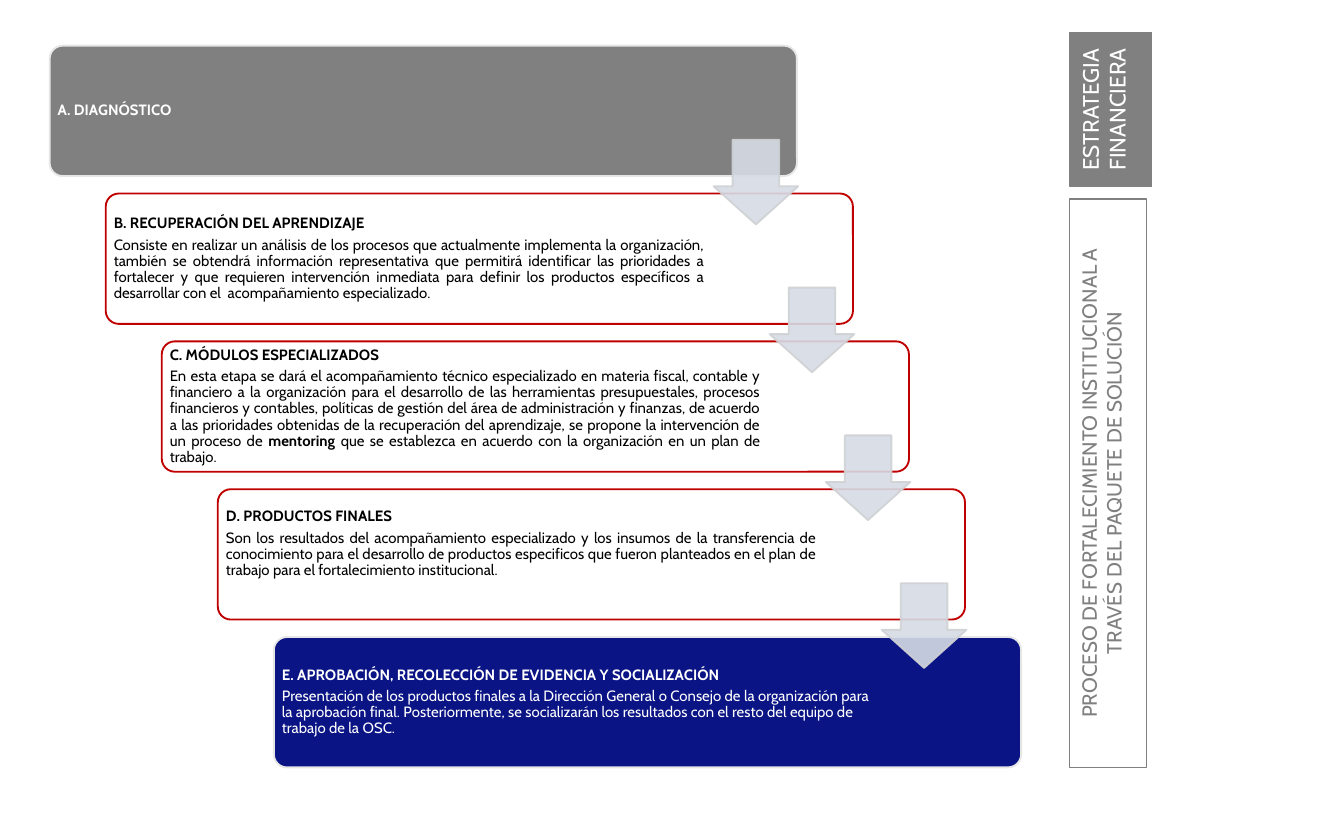
"""Builds the five-step institutional strengthening slide."""
from lxml.etree import SubElement
from pptx import Presentation
from pptx.dml.color import RGBColor
from pptx.enum.shapes import MSO_SHAPE
from pptx.enum.text import MSO_ANCHOR, PP_ALIGN
from pptx.oxml.ns import qn
from pptx.util import Inches, Pt

COLORS = {
    "white": "FFFFFF", "black": "000000", "gray": "808080", "pale": "E7E6E6",
    "red": "C00000", "navy": "0A1485", "arrow": "D6DCE5", "arrow_edge": "CFD1D4",
}
COLUMNS, ROWS = 100, 62.5
STEP_LEFT, STEP_TOP, STEP_RIGHT, STEP_DOWN = 3.7, 3.4, 4.17, 11
LEFT, JUSTIFY = PP_ALIGN.LEFT, PP_ALIGN.JUSTIFY

STEPS = [
    ("A. DIAGNÓSTICO", [], LEFT, "gray", "pale", "white", 0.03),
    ("B. RECUPERACIÓN DEL APRENDIZAJE", [
        ("Consiste en realizar un análisis de los procesos que actualmente implementa la "
         "organización, también se obtendrá información representativa que permitirá "
         "identificar las prioridades a fortalecer y que requieren intervención inmediata "
         "para definir los productos específicos a desarrollar con el  acompañamiento "
         "especializado.", False),
    ], JUSTIFY, "white", "red", "black", 0.03),
    ("C. MÓDULOS ESPECIALIZADOS", [
        ("En esta etapa se dará el acompañamiento técnico especializado en materia fiscal, "
         "contable y financiero a la organización para el desarrollo de las herramientas "
         "presupuestales, procesos financieros y contables, políticas de gestión del área "
         "de administración y finanzas, de acuerdo a las prioridades obtenidas de la "
         "recuperación del aprendizaje, se propone la intervención de un proceso de ", False),
        ("mentoring ", True),
        ("que se establezca en acuerdo con la organización en un plan de trabajo.", False),
    ], JUSTIFY, "white", "red", "black", 0.03),
    ("D. PRODUCTOS FINALES", [
        ("Son los resultados del acompañamiento especializado y los insumos de la "
         "transferencia de conocimiento para el desarrollo de productos especificos que "
         "fueron planteados en el plan de trabajo para el fortalecimiento institucional.",
         False),
    ], JUSTIFY, "white", "red", "black", 0.19),
    ("E. APROBACIÓN, RECOLECCIÓN DE EVIDENCIA Y SOCIALIZACIÓN", [
        ("Presentación de los productos finales a la Dirección General o Consejo de la "
         "organización para la aprobación final. Posteriormente, se socializarán los "
         "resultados con el resto del equipo de trabajo de la OSC.", False),
    ], LEFT, "navy", "pale", "white", 0.03),
]


def rgb(name):
    """Return the named color."""
    return RGBColor.from_string(COLORS[name])


def write(para, text, size=8, color="black", bold=False):
    """Add a formatted span of text to a paragraph."""
    span = para.add_run()
    span.text = text
    font = span.font
    font.name, font.size, font.bold = "Cabin", Pt(size), bold
    font.color.rgb = rgb(color)


class Slide:
    """Holds the grid and style of the current slide."""

    def __init__(self, deck):
        """Start a blank page."""
        self.column = deck.slide_width / COLUMNS
        self.row = deck.slide_height / ROWS
        self.page = deck.slides.add_slide(deck.slide_layouts[6])

    def place(self, left, top, width, height):
        """Turn grid columns and rows into slide lengths."""
        return (round(left * self.column), round(top * self.row),
                round(width * self.column), round(height * self.row))

    def shape(self, kind, area, fill, line, weight=1, adjust=(), alpha=None):
        """Add a preset shape with its fill and outline."""
        box = self.page.shapes.add_shape(kind, *self.place(*area))
        box.shadow.inherit = False
        for index, value in enumerate(adjust):
            box.adjustments[index] = value
        if fill:
            box.fill.solid()
            box.fill.fore_color.rgb = rgb(fill)
        else:
            box.fill.background()
        box.line.color.rgb = rgb(line)
        box.line.width = Pt(weight)
        if alpha:
            for color in box._element.spPr.iter(qn("a:srgbClr")):
                SubElement(color, qn("a:alpha"), val=str(alpha * 1000))
        return box

    def step_text(self, area, heading, spans, align, color, bottom):
        """Add a bold heading and its explanation."""
        frame = self.page.shapes.add_textbox(*self.place(*area)).text_frame
        frame.word_wrap = True
        frame.vertical_anchor = MSO_ANCHOR.MIDDLE
        frame.margin_left = frame.margin_top = frame.margin_right = Inches(0.03)
        frame.margin_bottom = Inches(bottom)
        write(frame.paragraphs[0], heading, color=color, bold=True)
        if spans:
            para = frame.add_paragraph()
            para.alignment = align
            for text, bold in spans:
                write(para, text, color=color, bold=bold)
        for para in frame.paragraphs:
            para.line_spacing = 0.9
            para.space_after = Pt(2.8)

    def side_label(self, area, text, size, color, fill, weight):
        """Add a rectangle whose text reads upward."""
        box = self.shape(MSO_SHAPE.RECTANGLE, area, fill, "gray", weight)
        frame = box.text_frame
        frame.word_wrap = True
        frame.vertical_anchor = MSO_ANCHOR.TOP
        frame._txBody.bodyPr.set("vert", "vert270")
        para = frame.paragraphs[0]
        para.alignment = PP_ALIGN.CENTER
        write(para, text, size=size, color=color)


def main():
    """Build and save the deck."""
    deck = Presentation()
    deck.slide_width, deck.slide_height = Inches(10), Inches(6.25)
    slide = Slide(deck)
    for index, (heading, spans, align, fill, line, color, bottom) in enumerate(STEPS):
        left = STEP_LEFT + index * STEP_RIGHT
        top = STEP_TOP + index * STEP_DOWN
        slide.shape(MSO_SHAPE.ROUNDED_RECTANGLE, (left, top, 55.6, 9.7), fill, line,
                    adjust=(0.1,))
        slide.step_text((left + 0.3, top + 0.3, 44.6, 9.1), heading, spans, align, color,
                        bottom)
    for index in range(len(STEPS) - 1):
        area = (53.1 + index * STEP_RIGHT, 10.4 + index * STEP_DOWN, 6.3, 6.3)
        slide.shape(MSO_SHAPE.DOWN_ARROW, area, "arrow", "arrow_edge",
                    adjust=(0.55, 0.45), alpha=90)
    slide.side_label(
        (79.6, 14.8, 5.7, 42.3),
        "PROCESO DE FORTALECIMIENTO INSTITUCIONAL A TRAVÉS DEL PAQUETE DE SOLUCIÓN",
        11, "gray", None, 0)
    slide.side_label((79.6, 2.4, 6.1, 11.5), "ESTRATEGIA FINANCIERA",
                     12, "white", "gray", 0.75)
    deck.save("out.pptx")


if __name__ == "__main__":
    main()
